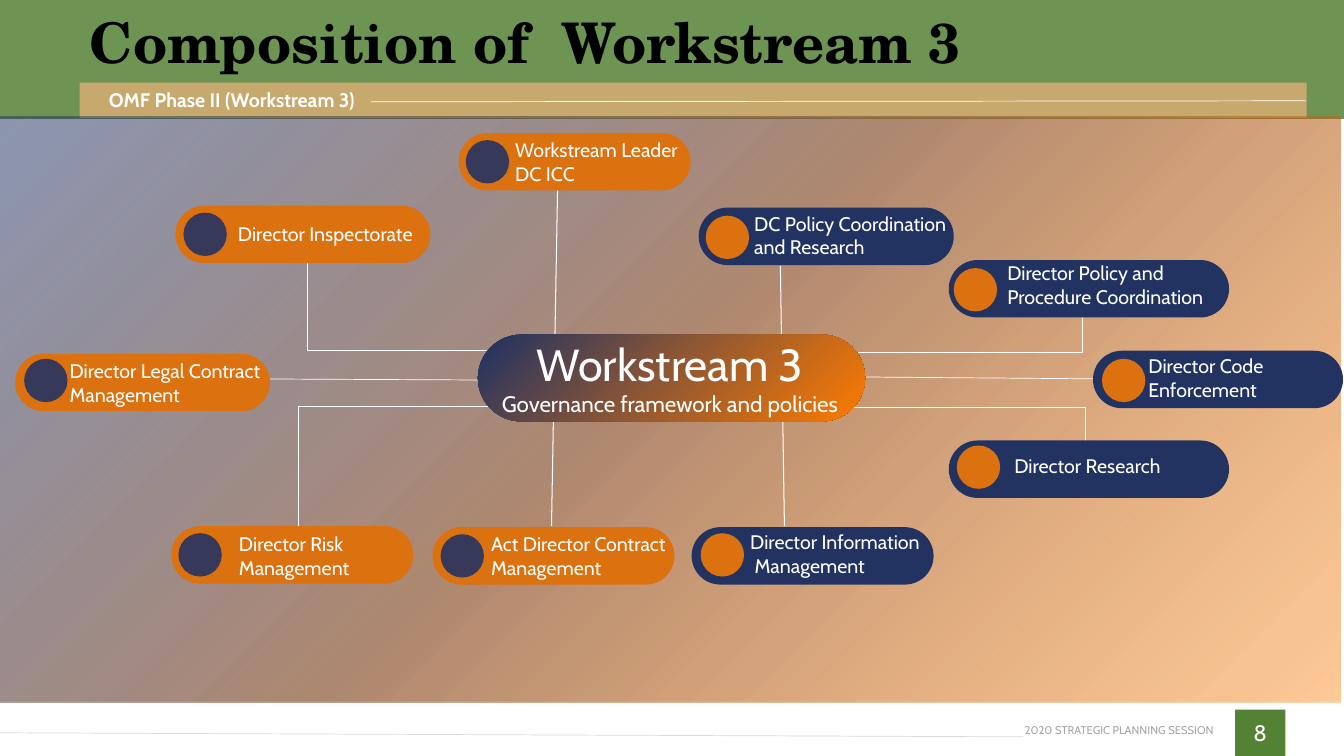
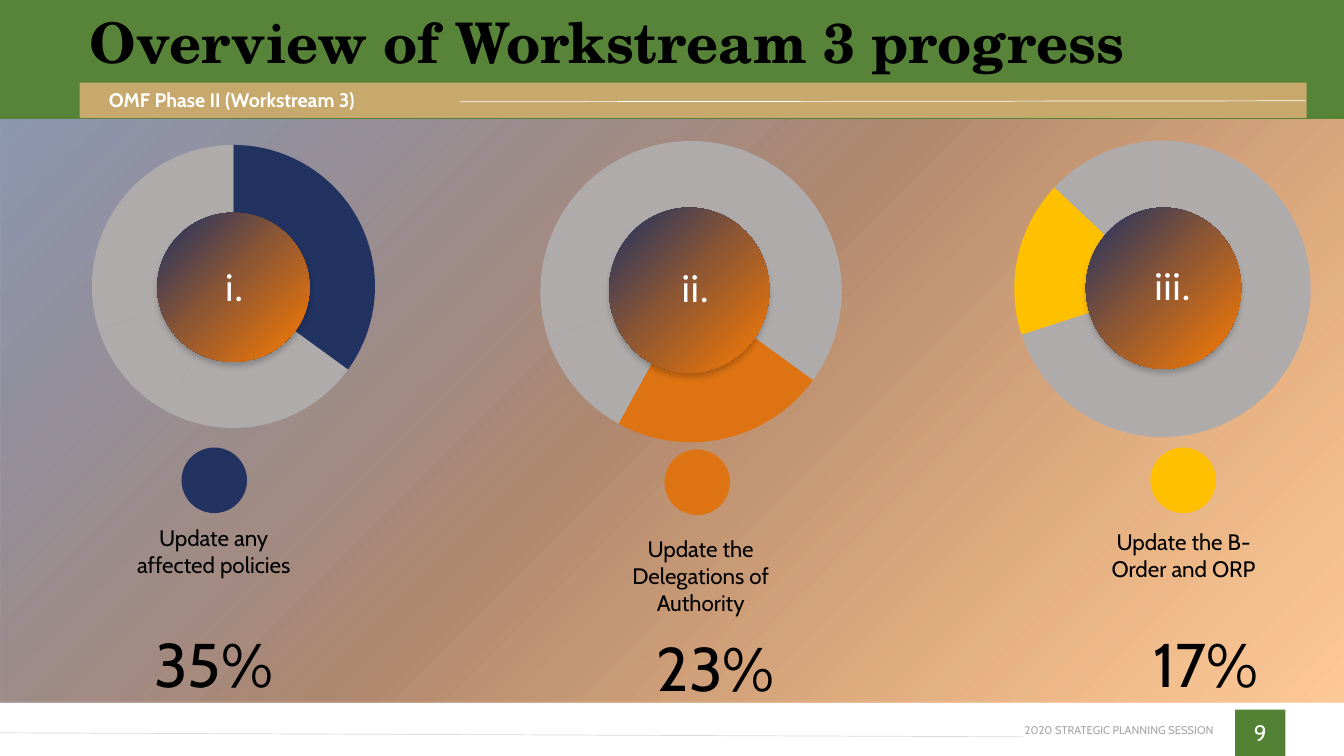
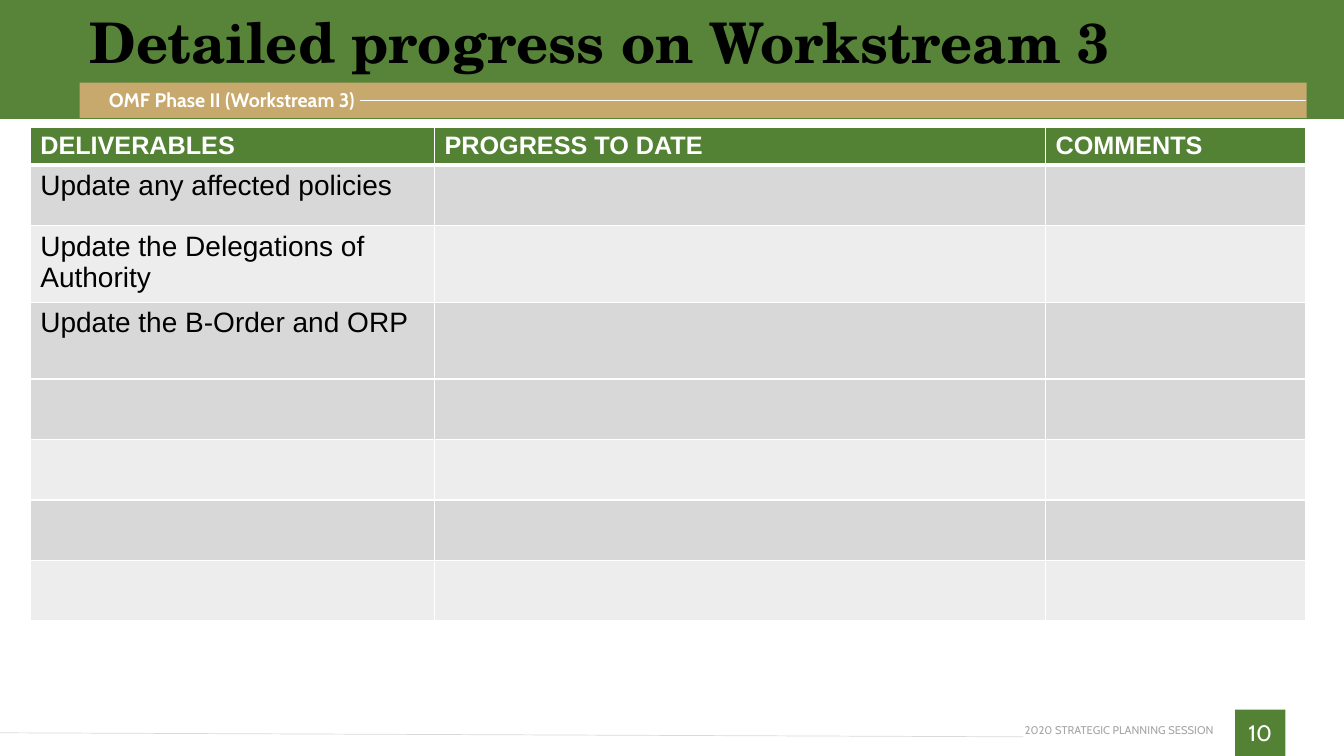
import dataclasses
import typing

import pptx
import pptx.chart.data
import pptx.dml.color
import pptx.enum.chart
import pptx.enum.shapes
import pptx.enum.text
import pptx.oxml
import pptx.oxml.ns
import pptx.util

PX = 9144  # EMU per px, 100 px to the inch
Align = pptx.enum.text.PP_ALIGN
Anchor = pptx.enum.text.MSO_ANCHOR
Kind = pptx.enum.shapes.MSO_SHAPE
Connector = pptx.enum.shapes.MSO_CONNECTOR
qn = pptx.oxml.ns.qn


# Theme and data types
@dataclasses.dataclass(frozen=True)
class Theme:
    green: str = "548235"
    tan: str = "C7A96E"
    navy: str = "223362"
    orange: str = "DC710F"
    dark_dot: str = "363959"
    amber: str = "DD7313"
    yellow: str = "FFC000"
    ring: str = "AFABAB"
    white: str = "FFFFFF"
    black: str = "000000"
    footer: str = "A6A6A6"
    rule: str = "D9D9D9"
    row_dark: str = "D8D8D8"
    row_light: str = "EDEDED"
    gradient: tuple = ((0, "FC7B01"), (52, "8F5733"), (100, "1D3164"))
    body_font: str = "Cabin"
    title_font: str = "TeX Gyre Schola"
    table_font: str = "Arial"
    chart_font: str = "Calibri"
    title_size: int = 40
    label_size: int = 14
    body_size: int = 16
    footer_size: int = 8
    hub_size: int = 32
    numeral_size: int = 28
    percent_size: int = 44
    table_head_size: int = 18
    table_size: int = 20
    chart_size: int = 10


THEME = Theme()


class Box(typing.NamedTuple):
    left: int
    top: int
    width: int
    height: int

    def emu(self) -> list[int]:
        return [value * PX for value in self]


class Link(typing.NamedTuple):
    start: tuple[int, int]
    end: tuple[int, int]
    width: float = 0.5
    bent: bool = False


class Role(typing.NamedTuple):
    text: str
    pill: tuple[int, int, int]  # left, top, width
    label: tuple[int, int, int]  # left, top, width
    dot: tuple[int, int]  # left, top
    policy: bool = False


class Deliverable(typing.NamedTuple):
    numeral: str
    text: str
    percent: str
    colour: str
    point: int
    chart: Box
    plot: tuple[float, float, float, float]
    disc: Box
    numeral_box: Box
    dot: tuple[int, int]
    caption: Box
    percent_at: tuple[int, int]


LINKS = [
    Link((296, 522), (489, 403), bent=True),
    Link((1076, 443), (844, 404), bent=True),
    Link((1074, 314), (847, 350), bent=True),
    Link((305, 261), (484, 348), bent=True),
    Link((774, 264), (778, 522), 0.75),
    Link((553, 189), (547, 522), 0.75),
    Link((474, 377), (268, 376)),
    Link((1107, 376), (856, 374)),
]

ROLES = [
    Role("Workstream Leader\nDC ICC", (455, 132, 230), (511, 137, 172), (462, 139)),
    Role("Director Inspectorate", (174, 204, 253), (236, 208, 182), (182, 211)),
    Role("Director Legal Contract Management", (15, 351, 253), (69, 356, 193), (24, 356)),
    Role("Director Risk\nManagement", (170, 522, 240), (237, 528, 185), (177, 529)),
    Role("Act Director Contract Management", (429, 523, 240), (487, 528, 185), (437, 530)),
    Role("DC Policy Coordination and Research", (693, 206, 253), (748, 210, 193), (700, 214), True),
    Role("Director Policy and\nProcedure Coordination", (941, 258, 278), (999, 259, 252), (946, 266), True),
    Role("Director Code Enforcement", (1084, 348, 248), (1139, 351, 193), (1093, 356), True),
    Role("Director Research", (941, 437, 278), (1006, 438, 203), (949, 442), True),
    Role("Director Information\n Management", (686, 523, 240), (744, 526, 178), (695, 529), True),
]

SHARES = (35, 23, 12, 17, 13)
DELIVERABLES = [
    Deliverable("i.", "Update any affected policies", "35%", THEME.navy, 0,
                Box(70, 122, 302, 338), (0.07, 0.03, 0.93, 0.9),
                Box(156, 211, 151, 148), Box(200, 255, 65, 57),
                (180, 444), Box(134, 520, 156, 81), (128, 616)),
    Deliverable("ii.", "Update the Delegations of Authority", "23%", THEME.amber, 1,
                Box(536, 117, 302, 338), (0, 0.06, 0.99, 0.9),
                Box(604, 206, 159, 164), Box(637, 256, 105, 95),
                (659, 446), Box(617, 531, 156, 81), (626, 620)),
    Deliverable("iii.", "Update the B-Order and ORP", "17%", THEME.yellow, 3,
                Box(1002, 116, 302, 338), (0.01, 0.07, 0.98, 0.87),
                Box(1077, 206, 154, 160), Box(1112, 254, 102, 93),
                (1141, 444), Box(1096, 524, 156, 54), (1112, 616)),
]

TABLE_HEAD = ("DELIVERABLES", "PROGRESS TO DATE", "COMMENTS")
COLUMN_WIDTHS = (401, 606, 258)
ROW_HEIGHTS = (38, 60, 76, 76, 60, 60, 60, 60)
LIGHT_ROWS = (2, 5, 7)


# Drawing helpers
def rgb(colour: str) -> pptx.dml.color.RGBColor:
    return pptx.dml.color.RGBColor.from_string(colour)


def xml(markup: str):
    """Parse markup after declaring the drawing and chart namespaces on its root."""
    tag, rest = markup.split(">", 1)
    closing = "/" if tag.endswith("/") else ""
    return pptx.oxml.parse_xml(
        f"{tag.rstrip('/')} {pptx.oxml.ns.nsdecls('a', 'c')}{closing}>{rest}")


def write_text(frame, text: str, *, size: int, colour: str = THEME.white,
               font: str = THEME.body_font, bold: bool = False, align=Align.LEFT,
               space_after: int = 0, line_spacing: float = 1.0) -> None:
    for index, line in enumerate(text.split("\n")):
        paragraph = frame.add_paragraph() if index else frame.paragraphs[0]
        paragraph.alignment = align
        paragraph.space_after = pptx.util.Pt(space_after)
        paragraph.line_spacing = line_spacing
        run = paragraph.add_run()
        run.text = line
        run.font.size = pptx.util.Pt(size)
        run.font.name = font
        run.font.bold = bold
        run.font.color.rgb = rgb(colour)


def add_text(slide, box: Box, text: str, *, anchor=Anchor.TOP, inset: bool = False, **style):
    shape = slide.shapes.add_textbox(*box.emu())
    frame = shape.text_frame
    frame.word_wrap = True
    frame.vertical_anchor = anchor
    if not inset:
        frame.margin_left = frame.margin_right = frame.margin_top = frame.margin_bottom = 0
    write_text(frame, text, **style)
    return shape


def add_shape(slide, kind, box: Box, colour: str, alpha: int = 100):
    shape = slide.shapes.add_shape(kind, *box.emu())
    shape.shadow.inherit = False
    shape.fill.solid()
    shape.fill.fore_color.rgb = rgb(colour)
    if alpha < 100:
        solid = shape.element.spPr.find(qn("a:solidFill"))
        solid[0].append(xml(f'<a:alpha val="{alpha * 1000}"/>'))
    shape.line.fill.background()
    return shape


def add_gradient_shape(slide, kind, box: Box, alphas: tuple[int, ...] = (100, 100, 100)):
    shape = add_shape(slide, kind, box, THEME.navy)
    stops = "".join(
        f'<a:gs pos="{position * 1000}"><a:srgbClr val="{colour}">'
        f'<a:alpha val="{alpha * 1000}"/></a:srgbClr></a:gs>'
        for (position, colour), alpha in zip(THEME.gradient, alphas))
    properties = shape.element.spPr
    properties.replace(properties.find(qn("a:solidFill")), xml(
        f'<a:gradFill rotWithShape="1"><a:gsLst>{stops}</a:gsLst><a:path path="circle">'
        '<a:fillToRect l="100000" t="100000"/></a:path></a:gradFill>'))
    return shape


def add_line(slide, link: Link, colour: str = THEME.white) -> None:
    kind = Connector.ELBOW if link.bent else Connector.STRAIGHT
    ends = [value * PX for value in (*link.start, *link.end)]
    connector = slide.shapes.add_connector(kind, *ends)
    connector.line.color.rgb = rgb(colour)
    connector.line.width = pptx.util.Pt(link.width)
    properties = connector.element.spPr
    if link.bent:
        geometry = properties.find(qn("a:prstGeom"))
        for child in list(geometry):
            geometry.remove(child)
        geometry.append(xml('<a:avLst><a:gd name="adj1" fmla="val 0"/></a:avLst>'))
    properties.append(xml("<a:effectLst/>"))


# Parts shared by the slides
def add_footer(slide, number: int) -> None:
    box = add_shape(slide, Kind.RECTANGLE, Box(1225, 704, 50, 46), THEME.green)
    box.text_frame.vertical_anchor = Anchor.MIDDLE
    write_text(box.text_frame, str(number), size=THEME.body_size, align=Align.CENTER)
    add_text(slide, Box(1015, 718, 189, 13), "2020 STRATEGIC PLANNING SESSION",
             size=THEME.footer_size, colour=THEME.footer, align=Align.RIGHT, anchor=Anchor.MIDDLE)
    add_line(slide, Link((1015, 731), (0, 727)), THEME.rule)


def add_backdrop(slide, left: int) -> None:
    add_gradient_shape(slide, Kind.RECTANGLE, Box(left, 116, 1333, 581), (40, 70, 50))


def add_header(slide, title: str, rule_start: tuple[int, int], alpha: int) -> None:
    add_shape(slide, Kind.RECTANGLE, Box(0, 0, 1333, 118), THEME.green, alpha)
    add_shape(slide, Kind.RECTANGLE, Box(79, 82, 1217, 35), THEME.tan)
    add_line(slide, Link(rule_start, (1295, 100)))
    add_text(slide, Box(108, 87, 348, 24), "OMF Phase II (Workstream 3)", bold=True,
             size=THEME.label_size, space_after=3, anchor=Anchor.MIDDLE)
    shape = slide.shapes.title
    shape.left, shape.top, shape.width, shape.height = Box(79, 0, 1255, 90).emu()
    frame = shape.text_frame
    frame.auto_size = pptx.enum.text.MSO_AUTO_SIZE.NONE
    frame.vertical_anchor = Anchor.MIDDLE
    write_text(frame, title, size=THEME.title_size, colour=THEME.black,
               font=THEME.title_font, bold=True, line_spacing=0.9)
    shape.element.getparent().append(shape.element)  # bring to front


def new_slide(presentation, number: int):
    slide = presentation.slides.add_slide(presentation.slide_layouts[5])
    add_footer(slide, number)
    return slide


# Slide 8: composition
def add_role(slide, role: Role) -> None:
    fill, dot = (THEME.navy, THEME.orange) if role.policy else (THEME.orange, THEME.dark_dot)
    pill = add_shape(slide, Kind.ROUNDED_RECTANGLE, Box(*role.pill, 57), fill)
    pill.adjustments[0] = 0.5
    add_shape(slide, Kind.OVAL, Box(*role.dot, 43, 43), dot)
    add_text(slide, Box(*role.label, 47), role.text,
             size=THEME.label_size, anchor=Anchor.MIDDLE)


def build_composition(presentation) -> None:
    slide = new_slide(presentation, 8)
    add_header(slide, "Composition of  Workstream 3", (368, 101), 85)
    add_backdrop(slide, -3)
    for link in LINKS:
        add_line(slide, link)
    hub = add_gradient_shape(slide, Kind.ROUNDED_RECTANGLE, Box(474, 332, 384, 86))
    hub.adjustments[0] = 0.5
    hub_text = add_text(slide, Box(487, 334, 355, 81),
                        "Workstream 3\nGovernance framework and policies",
                        size=THEME.hub_size, align=Align.CENTER)
    hub_text.text_frame.paragraphs[1].runs[0].font.size = pptx.util.Pt(THEME.body_size)
    for role in ROLES:
        add_role(slide, role)


# Slide 9: progress overview
def add_doughnut(slide, item: Deliverable) -> None:
    data = pptx.chart.data.CategoryChartData()
    data.categories = [str(index + 1) for index in range(len(SHARES))]
    data.add_series("Series 1", SHARES)
    chart = slide.shapes.add_chart(
        pptx.enum.chart.XL_CHART_TYPE.DOUGHNUT, *item.chart.emu(), data).chart
    chart.has_legend = False
    chart.has_title = False
    chart.font.size = pptx.util.Pt(THEME.chart_size)
    chart.font.name = THEME.chart_font
    chart.font.color.rgb = rgb(THEME.black)
    plot = chart.plots[0]
    plot.vary_by_categories = True
    for index in range(len(SHARES)):
        point_format = plot.series[0].points[index].format
        point_format.fill.solid()
        point_format.fill.fore_color.rgb = rgb(item.colour if index == item.point else THEME.ring)
        point_format.line.fill.background()

    # Ring position, hole and clear background
    root = chart.element.find(qn("c:chart"))
    area = root.find(qn("c:plotArea"))
    for layout in area.findall(qn("c:layout")):
        area.remove(layout)
    sizes = "".join(f'<c:{name} val="{value}"/>' for name, value in zip("xywh", item.plot))
    area.insert(0, xml(
        '<c:layout><c:manualLayout><c:layoutTarget val="inner"/><c:xMode val="edge"/>'
        f'<c:yMode val="edge"/>{sizes}</c:manualLayout></c:layout>'))
    area.find(".//" + qn("c:holeSize")).set("val", "54")
    clear = "<c:spPr><a:noFill/><a:ln><a:noFill/></a:ln></c:spPr>"
    area.append(xml(clear))
    root.addnext(xml(clear))


def add_deliverable(slide, item: Deliverable) -> None:
    add_shape(slide, Kind.OVAL, Box(*item.dot, 65, 65), item.colour)
    dark = {"colour": THEME.black, "align": Align.CENTER}
    add_text(slide, item.caption, item.text, size=THEME.body_size, **dark)
    add_doughnut(slide, item)
    disc = add_gradient_shape(slide, Kind.OVAL, item.disc)
    disc.element.spPr.find(qn("a:effectLst")).append(xml(
        '<a:outerShdw blurRad="50800" dist="38100" dir="5400000" algn="t" rotWithShape="0">'
        '<a:srgbClr val="000000"><a:alpha val="20000"/></a:srgbClr></a:outerShdw>'))
    add_text(slide, item.numeral_box, item.numeral, inset=True, size=THEME.numeral_size,
             font=THEME.chart_font, align=Align.CENTER)
    add_text(slide, Box(*item.percent_at, 168, 84), item.percent, inset=True,
             size=THEME.percent_size, **dark)


def build_overview(presentation) -> None:
    slide = new_slide(presentation, 9)
    add_backdrop(slide, 0)
    add_header(slide, "Overview of Workstream 3 progress", (456, 101), 98)
    for item in DELIVERABLES:
        add_deliverable(slide, item)


# Slide 10: detailed progress
def style_cell(cell, fill: str, top: int, bottom: int) -> None:
    cell.fill.solid()
    cell.fill.fore_color.rgb = rgb(fill)
    properties = cell.fill._xPr
    for index, (side, width) in enumerate((("L", 1), ("R", 1), ("T", top), ("B", bottom))):
        properties.insert(index, xml(
            f'<a:ln{side} w="{width * 12700}"><a:solidFill><a:srgbClr val="{THEME.white}"/>'
            f'</a:solidFill></a:ln{side}>'))


def build_details(presentation) -> None:
    slide = new_slide(presentation, 10)
    add_header(slide, "Detailed progress on Workstream 3", (357, 100), 98)
    box = Box(30, 126, sum(COLUMN_WIDTHS), sum(ROW_HEIGHTS))
    table = slide.shapes.add_table(len(ROW_HEIGHTS), len(COLUMN_WIDTHS), *box.emu()).table
    table.horz_banding = False
    for column, width in zip(table.columns, COLUMN_WIDTHS):
        column.width = width * PX
    for index, height in enumerate(ROW_HEIGHTS):
        table.rows[index].height = height * PX
        fill = THEME.row_light if index in LIGHT_ROWS else THEME.row_dark
        for cell in table.rows[index].cells:
            style_cell(cell, fill if index else THEME.green,
                       top=3 if index == 1 else 1, bottom=1 if index else 3)
    for index, heading in enumerate(TABLE_HEAD):
        write_text(table.cell(0, index).text_frame, heading, bold=True,
                   size=THEME.table_head_size, font=THEME.table_font)
    for index, item in enumerate(DELIVERABLES, start=1):
        write_text(table.cell(index, 0).text_frame, item.text, size=THEME.table_size,
                   colour=THEME.black, font=THEME.table_font)


def main() -> None:
    presentation = pptx.Presentation()
    presentation.slide_width = 1333 * PX
    presentation.slide_height = 750 * PX
    build_composition(presentation)
    build_overview(presentation)
    build_details(presentation)
    presentation.save("out.pptx")


if __name__ == "__main__":
    main()
